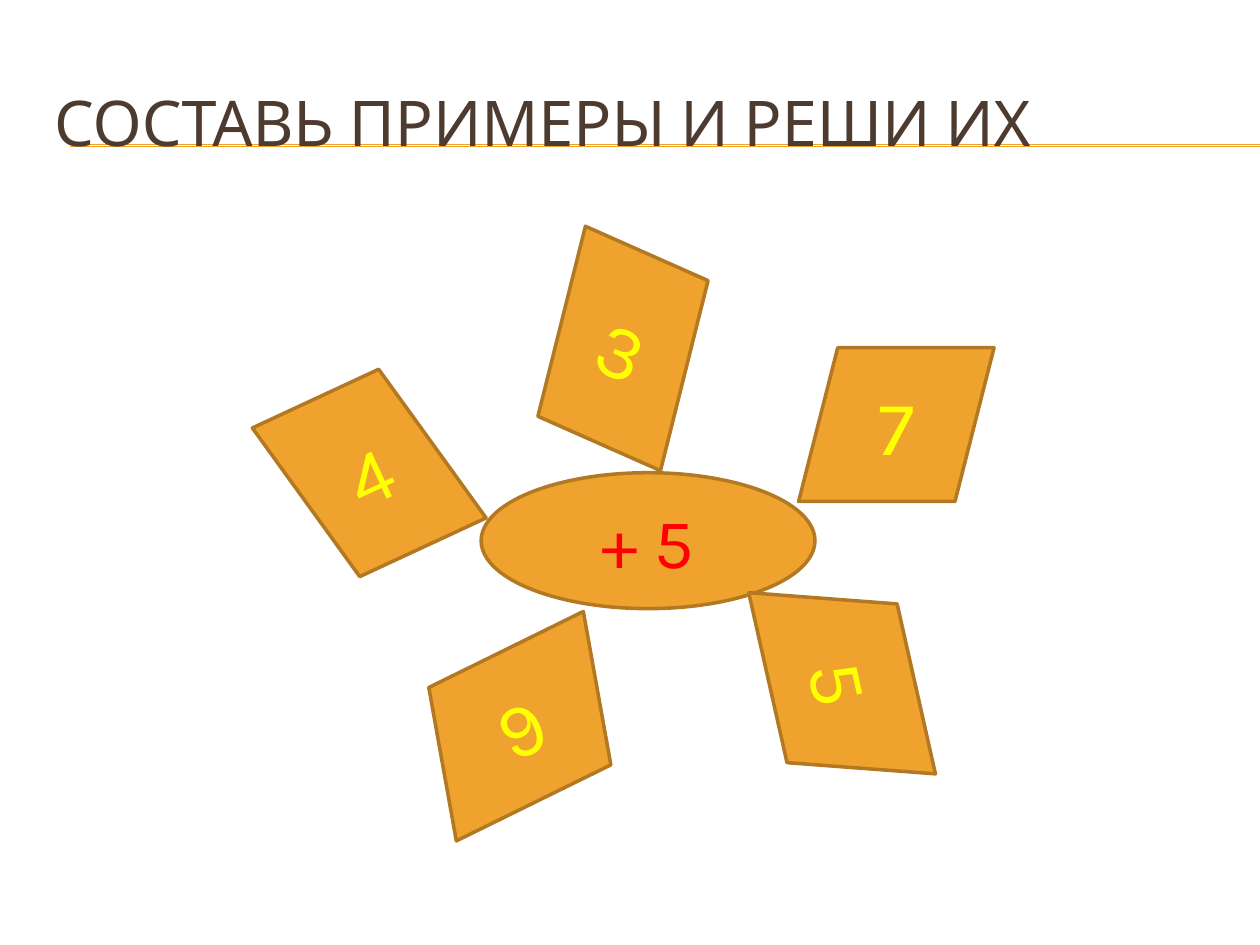
from lxml.etree import SubElement
from pptx import Presentation
from pptx.dml.color import RGBColor
from pptx.enum.shapes import MSO_CONNECTOR as Connector, MSO_SHAPE as Shape
from pptx.enum.text import MSO_ANCHOR as Anchor, PP_ALIGN as Align
from pptx.oxml.ns import qn
from pptx.util import Cm, Pt

FONT = "Karla"
ORANGE, BROWN = "F0A22E", "B27822"
RED, YELLOW, DARK = "FF0000", "FFFF00", "4E3B30"

PETALS = [
    ("7", (16.1, 7.01, 3.94, 3.1), 0, False),
    ("4", (5.69, 7.72, 3.51, 3.63), 335.1, True),
    ("5", (14.78, 12.34, 4.39, 2.87), 77.3, False),
    ("9", (8.31, 13.13, 4.34, 3.02), 333.8, False),
    ("3", (10.87, 5.08, 3.38, 3.89), 23.9, True),
]


def color(code):
    return RGBColor.from_string(code)


def lengths(box):
    return [Cm(value) for value in box]


def write(holder, wording, size, ink, align):
    frame = holder.text_frame
    frame.text = wording
    frame.word_wrap = True
    frame.vertical_anchor = Anchor.MIDDLE
    paragraph = frame.paragraphs[0]
    paragraph.alignment = align
    font = paragraph.runs[0].font
    font.name, font.size = FONT, Pt(size)
    font.color.rgb = color(ink)


def add_rule(slide, y):
    rule = slide.shapes.add_connector(
        Connector.STRAIGHT, Cm(1.42), Cm(y), Cm(25.4), Cm(y))
    rule.line.color.rgb = color(ORANGE)
    rule.line.width = Pt(0.75)
    SubElement(rule._element.spPr, qn("a:effectLst"))


def add_title(slide, wording):
    title = slide.shapes.add_textbox(*lengths((0.84, 1.27, 24.13, 2.34)))
    write(title, wording, 36, DARK, Align.LEFT)


def add_flower_part(slide, kind, box, wording, size, ink):
    part = slide.shapes.add_shape(kind, *lengths(box))
    part.shadow.inherit = False
    part.fill.solid()
    part.fill.fore_color.rgb = color(ORANGE)
    part.line.color.rgb = color(BROWN)
    part.line.width = Pt(2)
    write(part, wording, size, ink, Align.CENTER)
    return part


def add_petal(slide, digit, box, angle, flipped):
    petal = add_flower_part(
        slide, Shape.FLOWCHART_DATA, box, digit, 44, YELLOW)
    petal.rotation = angle
    if flipped:
        petal._element.spPr.find(qn("a:xfrm")).set("flipH", "1")


def main():
    deck = Presentation()
    deck.slide_width, deck.slide_height = Cm(25.4), Cm(19.05)
    slide = deck.slides.add_slide(deck.slide_layouts[6])
    for y in (2.92, 2.95):
        add_rule(slide, y)
    add_title(slide, "СОСТАВЬ ПРИМЕРЫ И РЕШИ ИХ")
    add_flower_part(
        slide, Shape.OVAL, (9.7, 9.53, 6.73, 2.74), "+ 5", 40, RED)
    for petal in PETALS:
        add_petal(slide, *petal)
    deck.save("out.pptx")


if __name__ == "__main__":
    main()
